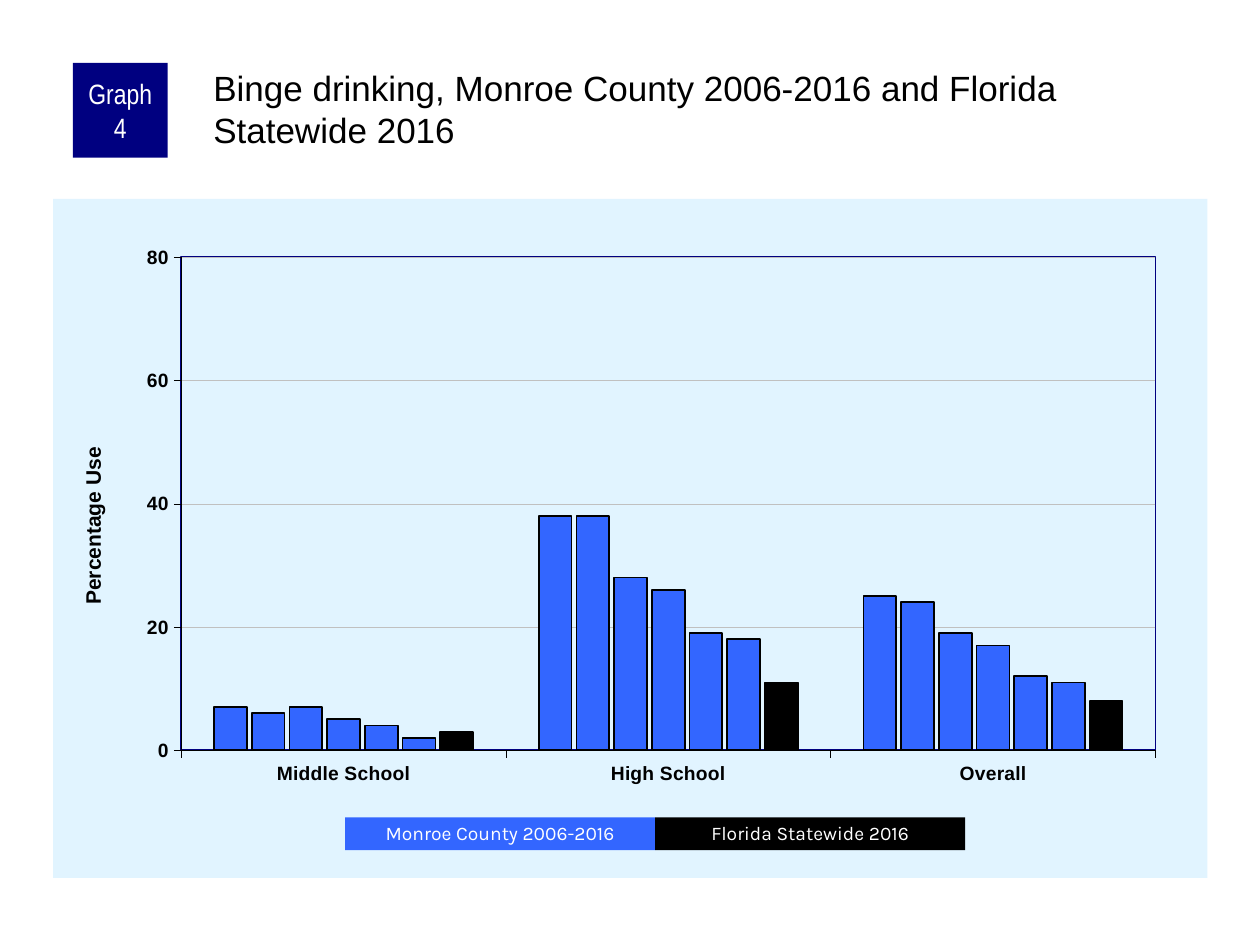
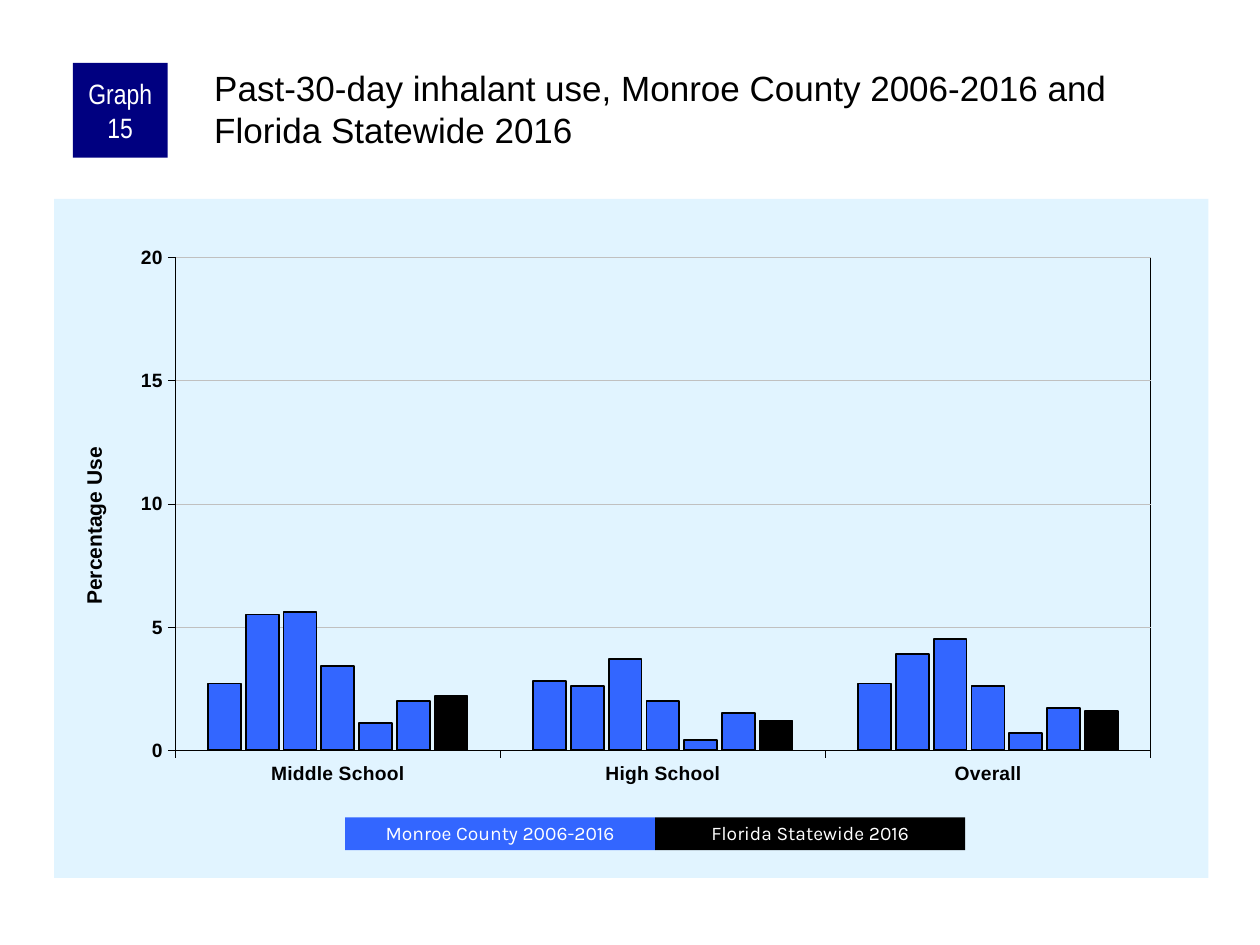
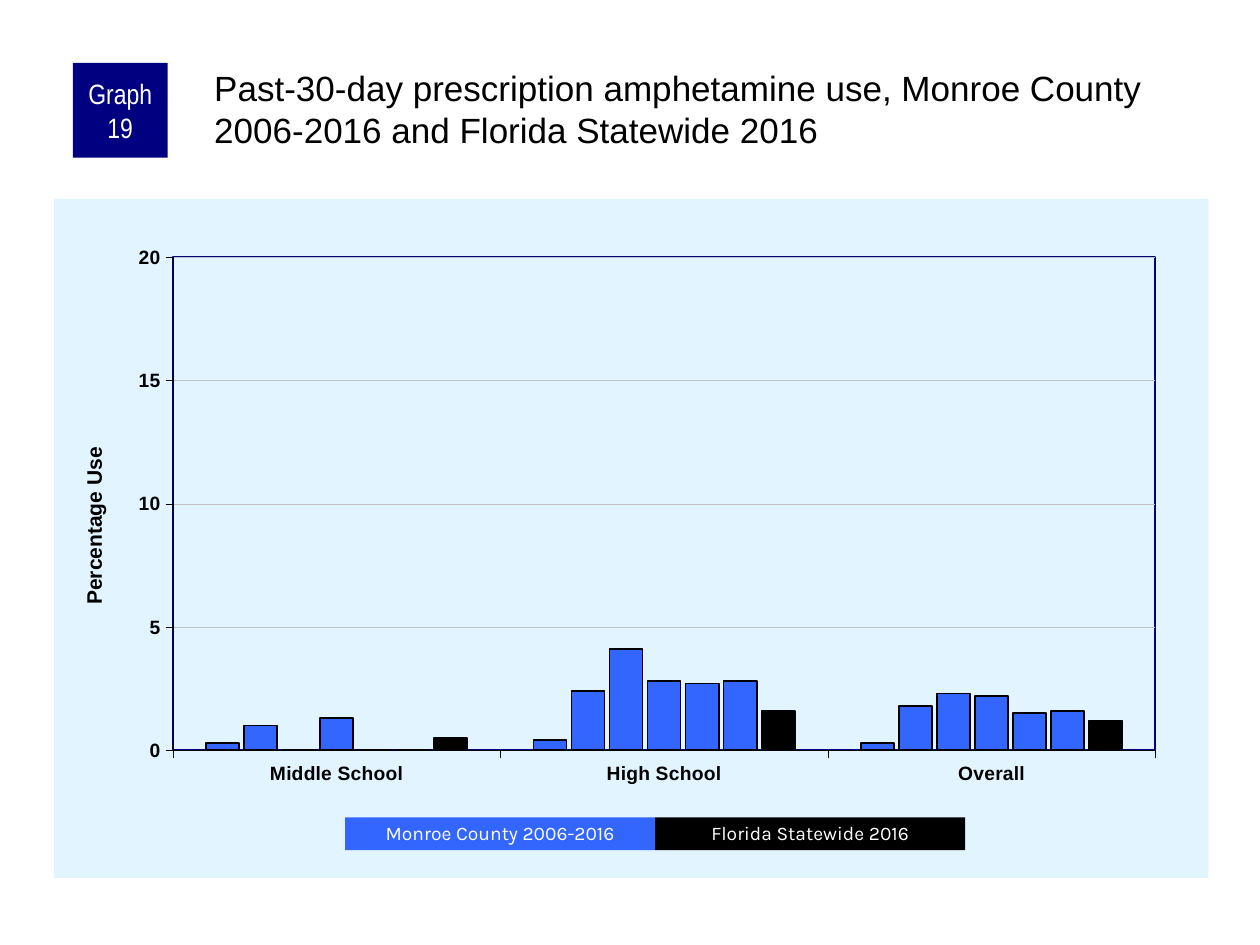
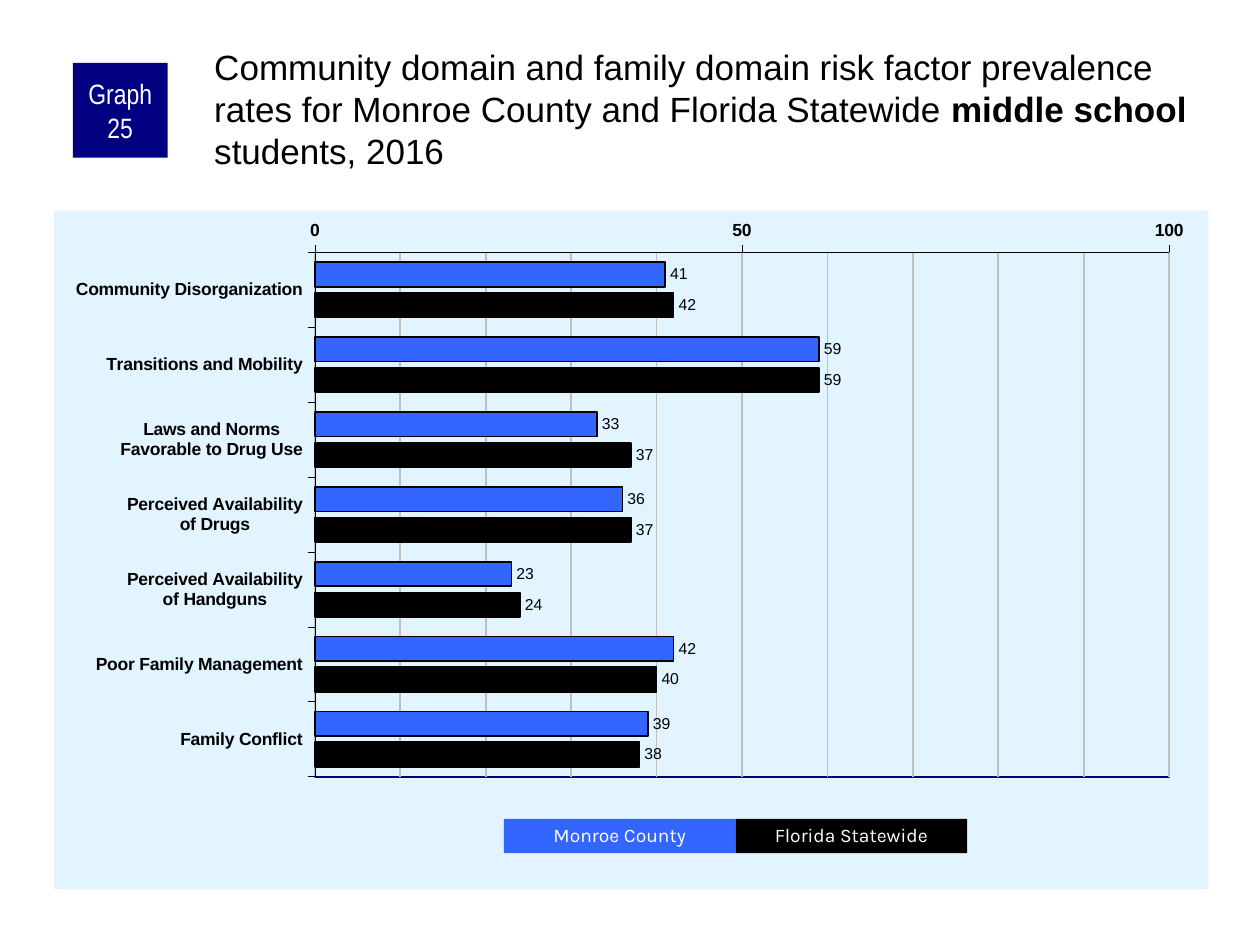
from lxml import etree
from pptx import Presentation
from pptx import util as u
from pptx.chart import data as chart_data
from pptx.dml.color import RGBColor
from pptx.enum import chart as charts, shapes, text
from pptx.oxml import ns

COLORS = {
    "navy": "000080",
    "blue": "3366FF",
    "black": "000000",
    "white": "FFFFFF",
    "panel": "E1F4FF",
    "grid": "C0C0C0",
}

SCHOOLS = ["Middle School", "High School", "Overall"]
RISK_FACTORS = [
    "Community Disorganization",
    "Transitions and Mobility",
    "Laws and Norms\nFavorable to Drug Use",
    "Perceived Availability\nof Drugs",
    "Perceived Availability\nof Handguns",
    "Poor Family Management",
    "Family Conflict",
]

TREND = {
    "type": charts.XL_CHART_TYPE.COLUMN_CLUSTERED,
    "categories": SCHOOLS,
    "axis_title": "Percentage Use",
    "chart_top": 4.01, "title_top": 1.27,
    "gap": 200, "overlap": -15,
    "font": 8, "axis_font": 11, "grid_width": 0.25,
    "legend": ["Monroe County 2006-2016", "Florida Statewide 2016"],
    "legend_box": (6.96, 16.48, 6.25, 0.66),
}
RISK = {
    "type": charts.XL_CHART_TYPE.BAR_CLUSTERED,
    "categories": RISK_FACTORS,
    "axis_title": None,
    "chart_top": 4.24, "title_top": 0.84,
    "gap": 80, "overlap": -25,
    "font": 11.8, "axis_font": 10, "grid_width": 1,
    "legend": ["Monroe County", "Florida Statewide"],
    "legend_box": (10.16, 16.51, 4.67, 0.69),
}

GRAPHS = [
    {
        "kind": TREND, "number": 4, "left": 1.07,
        "title": [("Binge drinking, Monroe County 2006-2016 and Florida Statewide 2016", False)],
        "maximum": 80, "step": 20, "border": ("navy", 1),
        "plot": (0.111, 0.086, 0.844, 0.726),
        "values": [(7, 38, 25), (6, 38, 24), (7, 28, 19), (5, 26, 17),
                   (4, 19, 12), (2, 18, 11), (3, 11, 8)],
    },
    {
        "kind": TREND, "number": 15, "left": 1.09,
        "title": [("Past-30-day inhalant use, Monroe County 2006-2016 and Florida Statewide 2016", False)],
        "maximum": 20, "step": 5, "border": ("black", 0.25),
        "plot": (0.105, 0.086, 0.845, 0.726),
        "values": [(2.7, 2.8, 2.7), (5.5, 2.6, 3.9), (5.6, 3.7, 4.5), (3.4, 2, 2.6),
                   (1.1, 0.4, 0.7), (2, 1.5, 1.7), (2.2, 1.2, 1.6)],
    },
    {
        "kind": TREND, "number": 19, "left": 1.09,
        "title": [("Past-30-day prescription amphetamine use, Monroe County 2006-2016 "
                   "and Florida Statewide 2016", False)],
        "maximum": 20, "step": 5, "border": ("navy", 1),
        "plot": (0.103, 0.086, 0.851, 0.726),
        "values": [(0.3, 0.4, 0.3), (1, 2.4, 1.8), (0, 4.1, 2.3), (1.3, 2.8, 2.2),
                   (0, 2.7, 1.5), (0, 2.8, 1.6), (0.5, 1.6, 1.2)],
    },
    {
        "kind": RISK, "number": 25, "left": 1.09,
        "title": [("Community domain and family domain risk factor prevalence rates "
                   "for Monroe County and Florida Statewide ", False),
                  ("middle school", True), (" students, 2016", False)],
        "maximum": 100, "step": 50, "border": ("navy", 1),
        "plot": (0.226, 0.062, 0.74, 0.772),
        "values": [(41, 59, 33, 36, 23, 42, 39), (42, 59, 37, 37, 24, 40, 38)],
    },
]


def color(name):
    return RGBColor.from_string(COLORS[name])


def box(left, top, width, height):
    return [u.Cm(length) for length in (left, top, width, height)]


def style_font(font, size, name="Arial", fill="black", bold=False):
    font.size, font.name, font.bold = u.Pt(size), name, bold
    font.color.rgb = color(fill)


def style_line(line, name, width):
    line.color.rgb = color(name)
    line.width = u.Pt(width)


def set_margins(frame, left, top, right, bottom):
    frame.margin_left, frame.margin_top = u.Cm(left), u.Cm(top)
    frame.margin_right, frame.margin_bottom = u.Cm(right), u.Cm(bottom)


def add_run(paragraph, words, *style, **options):
    run = paragraph.add_run()
    run.text = words
    style_font(run.font, *style, **options)


def add_block(slide, place, fill, words, size, font_name):
    shape = slide.shapes.add_shape(shapes.MSO_SHAPE.RECTANGLE, *box(*place))
    shape.shadow.inherit = False
    shape.fill.solid()
    shape.fill.fore_color.rgb = color(fill)
    shape.line.fill.background()
    frame = shape.text_frame
    frame.word_wrap = True
    frame.vertical_anchor = text.MSO_ANCHOR.MIDDLE
    paragraph = frame.paragraphs[0]
    paragraph.alignment = text.PP_ALIGN.CENTER
    add_run(paragraph, words, size, font_name, "white")
    return frame


def add_heading(slide, graph):
    badge = add_block(slide, (1.47, 1.27, 1.91, 1.91), "navy",
                      f"Graph {graph['number']}", 16, "Arial Narrow")
    set_margins(badge, 0.13, 0, 0.13, 0)
    place = box(graph["left"] + 3.15, graph["kind"]["title_top"], 20.12, 2.11)
    frame = slide.shapes.add_textbox(*place).text_frame
    frame.word_wrap = True
    set_margins(frame, 0.08, 0.08, 0, 0)
    for words, bold in graph["title"]:
        add_run(frame.paragraphs[0], words, 20, bold=bold)


def add_legend(slide, kind):
    left, top, width, height = kind["legend_box"]
    for index, (words, fill) in enumerate(zip(kind["legend"], ("blue", "black"))):
        place = (left + index * width, top, width, height)
        frame = add_block(slide, place, fill, words, 11, "Karla")
        frame.paragraphs[0].line_spacing = 0.9


def manual_layout(settings):
    layout = etree.Element(ns.qn("c:layout"))
    manual = etree.SubElement(layout, ns.qn("c:manualLayout"))
    for tag, value in settings.items():
        etree.SubElement(manual, ns.qn(f"c:{tag}")).set("val", str(value))
    return layout


def shape_properties(fill=None, border=None):
    properties = etree.Element(ns.qn("c:spPr"))

    def add_fill(parent, name):
        if name is None:
            etree.SubElement(parent, ns.qn("a:noFill"))
        else:
            solid = etree.SubElement(parent, ns.qn("a:solidFill"))
            etree.SubElement(solid, ns.qn("a:srgbClr")).set("val", COLORS[name])

    add_fill(properties, fill)
    line = etree.SubElement(properties, ns.qn("a:ln"))
    if border:
        line.set("w", str(int(u.Pt(border[1]))))
    add_fill(line, border[0] if border else None)
    return properties


def frame_chart(chart, graph):
    plot_area = chart.plots[0]._element.getparent()
    for layout in plot_area.findall(ns.qn("c:layout")):
        plot_area.remove(layout)
    x, y, width, height = graph["plot"]
    plot_area.insert(0, manual_layout({
        "layoutTarget": "inner", "xMode": "edge", "yMode": "edge",
        "x": x, "y": y, "w": width, "h": height}))
    plot_area.append(shape_properties(border=graph["border"]))
    plot_area.getparent().addnext(shape_properties(fill="panel"))


def style_axes(chart, graph):
    kind = graph["kind"]
    category_axis, value_axis = chart.category_axis, chart.value_axis
    for axis in (category_axis, value_axis):
        axis.major_tick_mark = charts.XL_TICK_MARK.OUTSIDE
        axis.minor_tick_mark = charts.XL_TICK_MARK.NONE
        style_font(axis.tick_labels.font, kind["axis_font"], bold=True)
        style_line(axis.format.line, "black", 0.25)
    value_axis.minimum_scale, value_axis.maximum_scale = 0, graph["maximum"]
    value_axis.major_unit = graph["step"]
    value_axis.has_major_gridlines = True
    style_line(value_axis.major_gridlines.format.line, "grid", kind["grid_width"])
    if kind["axis_title"]:
        title = value_axis.axis_title
        add_run(title.text_frame.paragraphs[0], kind["axis_title"], 12, bold=True)
        element = title._element
        for layout in element.findall(ns.qn("c:layout")):
            element.remove(layout)
        element.find(ns.qn("c:tx")).addnext(manual_layout(
            {"xMode": "edge", "yMode": "edge", "x": 0.02, "y": 0.36}))
    if kind is RISK:
        category_axis.reverse_order = True
        category_axis.crosses = charts.XL_AXIS_CROSSES.MAXIMUM
        value_axis.minor_unit = 10
        value_axis.has_minor_gridlines = True
        gridlines = value_axis._element.find(ns.qn("c:minorGridlines"))
        gridlines.append(shape_properties(border=("grid", kind["grid_width"])))


def add_graph(slide, graph):
    kind = graph["kind"]
    data = chart_data.CategoryChartData()
    data.categories = kind["categories"]
    for number, values in enumerate(graph["values"], 1):
        data.add_series(f"Series {number}", values)
    place = box(graph["left"], kind["chart_top"], 23.27, 13.69)
    chart = slide.shapes.add_chart(kind["type"], *place, data).chart
    chart.has_title = chart.has_legend = False
    style_font(chart.font, kind["font"])
    plot = chart.plots[0]
    plot.vary_by_categories = False
    plot.gap_width, plot.overlap = kind["gap"], kind["overlap"]
    statewide = len(graph["values"]) - 1
    for index, series in enumerate(plot.series):
        series.format.fill.solid()
        series.format.fill.fore_color.rgb = color("black" if index == statewide else "blue")
        style_line(series.format.line, "black", 1)
        if kind is RISK:
            labels = series.data_labels
            labels.show_value = True
            labels.position = charts.XL_LABEL_POSITION.OUTSIDE_END
            style_font(labels.font, 9)
    style_axes(chart, graph)
    frame_chart(chart, graph)


def main():
    presentation = Presentation()
    presentation.slide_width, presentation.slide_height = u.Cm(25.4), u.Cm(19.05)
    for graph in GRAPHS:
        slide = presentation.slides.add_slide(presentation.slide_layouts[6])
        add_graph(slide, graph)
        add_heading(slide, graph)
        add_legend(slide, graph["kind"])
    presentation.save("out.pptx")


if __name__ == "__main__":
    main()
